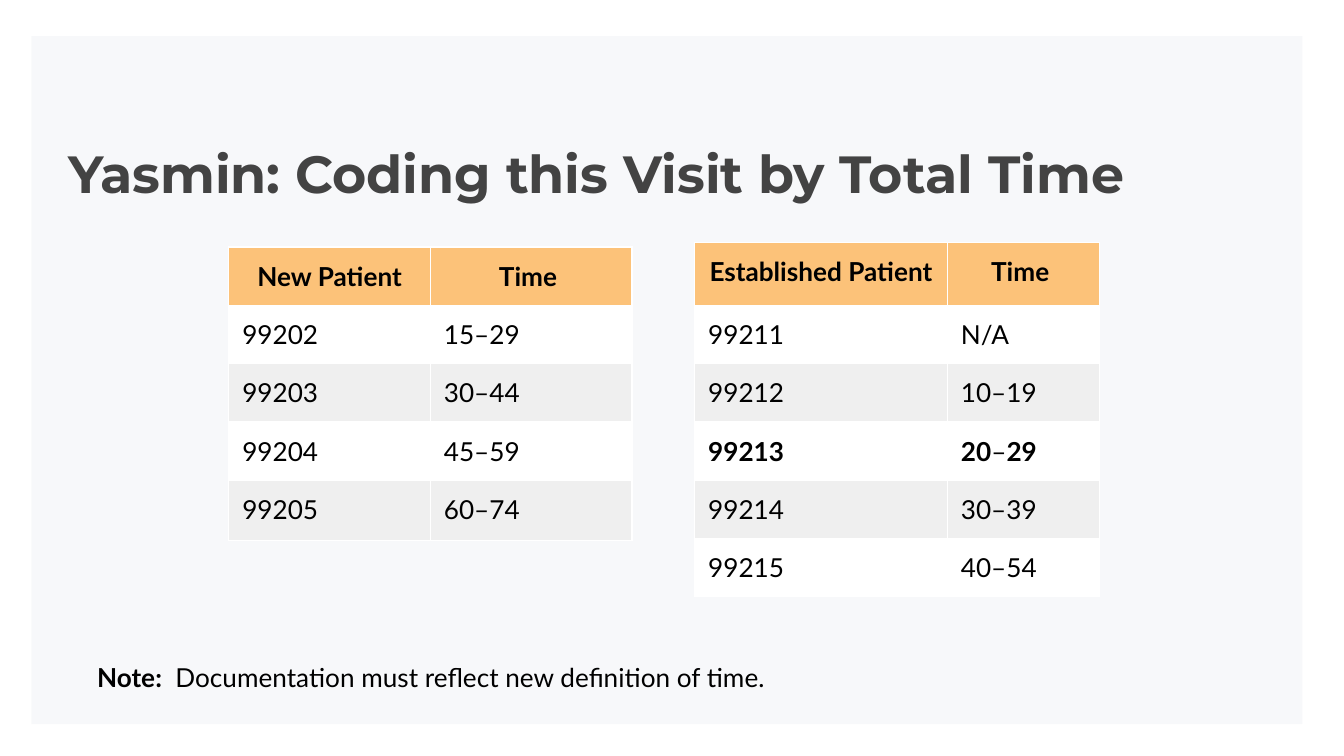
from lxml import etree
from pptx import Presentation
from pptx.dml.color import RGBColor
from pptx.enum.shapes import MSO_SHAPE
from pptx.enum.text import MSO_ANCHOR, MSO_AUTO_SIZE, PP_ALIGN
from pptx.oxml.ns import qn
from pptx.util import Pt

RECTANGLE = MSO_SHAPE.RECTANGLE
TOP = MSO_ANCHOR.TOP
NO_AUTOFIT = MSO_AUTO_SIZE.NONE
LEFT, CENTER = PP_ALIGN.LEFT, PP_ALIGN.CENTER

BODY_FONT = {"name": "Lato", "size": Pt(14)}
TITLE_FONT = {"name": "Montserrat", "size": Pt(28)}
INSET = Pt(7.2)
FRAME_FORMAT = {
    "margin_left": INSET, "margin_right": INSET,
    "margin_top": INSET, "margin_bottom": INSET,
    "word_wrap": True, "auto_size": NO_AUTOFIT, "vertical_anchor": TOP,
}
CELL_FORMAT = {
    "margin_left": INSET, "margin_right": INSET,
    "margin_top": INSET, "margin_bottom": INSET, "vertical_anchor": TOP,
}

NEW_PATIENT = [
    ("New Patient", "Time "),
    ("99202", "15–29"),
    ("99203", "30–44"),
    ("99204", "45–59"),
    ("99205", "60–74"),
]
ESTABLISHED_PATIENT = [
    ("Established Patient", "Time "),
    ("99211", "N/A"),
    ("99212", "10–19"),
    ([("99213", True)], [("20", True), ("–", False), ("29", True)]),
    ("99214", "30–39"),
    ("99215", "40–54"),
]


def apply_format(target, values):
    for name, value in values.items():
        setattr(target, name, value)


def paint(fill, color, opacity=100):
    fill.solid()
    fill.fore_color.rgb = RGBColor.from_string(color)
    if opacity < 100:
        color_element = fill._xPr.find(qn("a:solidFill"))[0]
        etree.SubElement(color_element, qn("a:alpha"), val=str(opacity * 1000))


def write_runs(paragraph, runs, font_format, color, alignment=LEFT):
    paragraph.alignment = alignment
    for text, bold in runs:
        run = paragraph.add_run()
        run.text = text
        apply_format(run.font, {**font_format, "bold": bold})
        run.font.color.rgb = RGBColor.from_string(color)


def add_borders(cell, color, width):
    properties = cell._tc.get_or_add_tcPr()
    for side in ("lnL", "lnR", "lnT", "lnB"):
        line = etree.SubElement(properties, qn(f"a:{side}"), w=str(width))
        fill = etree.SubElement(line, qn("a:solidFill"))
        etree.SubElement(fill, qn("a:srgbClr"), val=color)


def fill_placeholder(placeholder, box, runs, font_format, color):
    apply_format(placeholder, dict(zip(("left", "top", "width", "height"), box)))
    apply_format(placeholder.text_frame, FRAME_FORMAT)
    paragraph = placeholder.text_frame.paragraphs[0]
    # No bullet and no hanging indent
    properties = paragraph._p.get_or_add_pPr()
    properties.set("marL", "0")
    properties.set("indent", "0")
    etree.SubElement(properties, qn("a:buNone"))
    paragraph.space_before = Pt(0)
    write_runs(paragraph, runs, font_format, color)


def add_panel(slide, box):
    panel = slide.shapes.add_shape(RECTANGLE, *box)
    panel.shadow.inherit = False
    paint(panel.fill, "073763", 3)
    panel.line.fill.background()


def add_time_table(slide, left, top, column_widths, row_heights, rows):
    frame = slide.shapes.add_table(
        len(rows), len(column_widths), left, top,
        sum(column_widths), sum(row_heights))
    table = frame.table
    for column, width in zip(table.columns, column_widths):
        column.width = width
    for row_index, values in enumerate(rows):
        table.rows[row_index].height = row_heights[row_index]
        is_header = row_index == 0
        for column_index, value in enumerate(values):
            cell = table.cell(row_index, column_index)
            apply_format(cell, CELL_FORMAT)
            add_borders(cell, "FFFFFF", Pt(0.75))
            if is_header:
                paint(cell.fill, "FFAB40", 69)
            else:
                paint(cell.fill, "FFFFFF" if row_index % 2 else "EFEFEF")
            runs = [(value, is_header)] if isinstance(value, str) else value
            write_runs(cell.text_frame.paragraphs[0], runs, BODY_FONT,
                       "000000", CENTER if is_header else LEFT)


def build_slide(presentation):
    slide = presentation.slides.add_slide(presentation.slide_layouts[1])
    title, note = slide.placeholders[0], slide.placeholders[1]

    # Tinted background panel, behind everything else
    add_panel(slide, (Pt(16.8), Pt(19.4), Pt(681), Pt(368.6)))
    tree = slide.shapes._spTree
    tree.insert(2, tree[-1])

    # Title
    fill_placeholder(
        title, (Pt(29.5), Pt(68.4), Pt(671), Pt(45.4)),
        [("Yasmin: Coding this Visit by Total Time", True)],
        TITLE_FONT, "434343")

    # Code and time tables
    row = Pt(31.1)
    add_time_table(slide, Pt(122.6), Pt(132.3), [Pt(108)] * 2,
                   [row] * 4 + [Pt(32.5)], NEW_PATIENT)
    add_time_table(slide, Pt(372.2), Pt(129.9), [Pt(135.4), Pt(81.4)],
                   [Pt(33.6)] + [row] * 5, ESTABLISHED_PATIENT)

    # Note
    fill_placeholder(
        note, (Pt(44.8), Pt(347), Pt(585.4), Pt(21)),
        [("Note:", True),
         ("  Documentation must reflect new definition of time.", False)],
        BODY_FONT, "000000")


def main():
    presentation = Presentation()
    presentation.slide_width = Pt(720)
    presentation.slide_height = Pt(405)
    build_slide(presentation)
    presentation.save("out.pptx")


if __name__ == "__main__":
    main()
